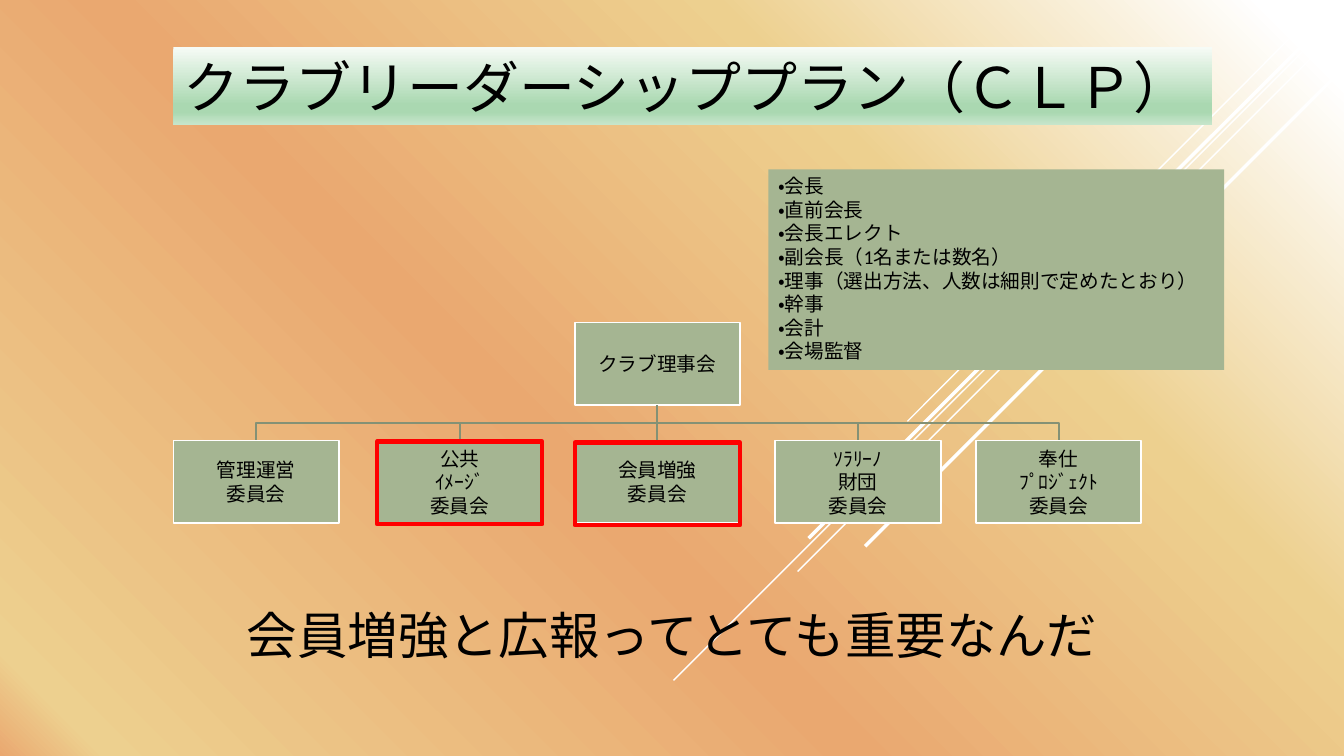
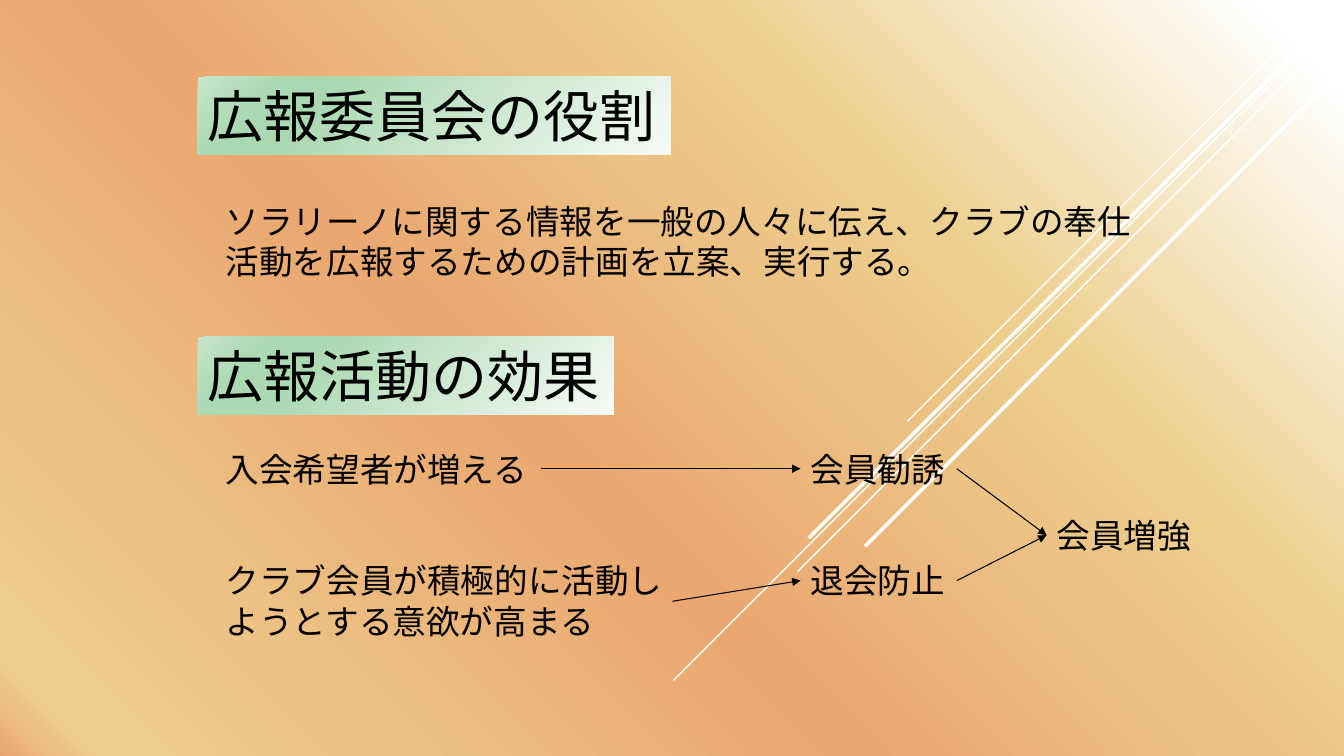
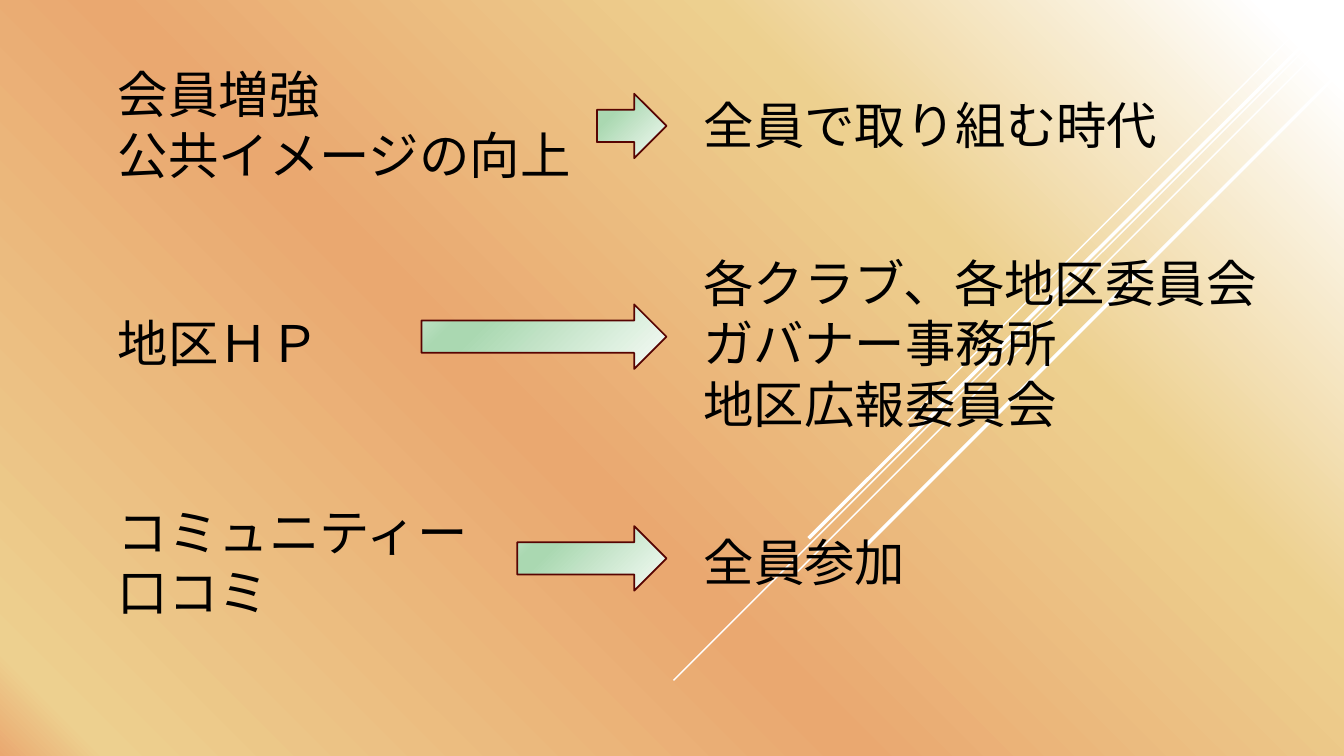
import pptx
import pptx.dml.color
import pptx.enum.lang
import pptx.enum.shapes
import pptx.enum.text
import pptx.oxml
import pptx.oxml.ns
import pptx.util

Inches = pptx.util.Inches
SHAPE = pptx.enum.shapes.MSO_SHAPE
FIT = pptx.enum.text.MSO_AUTO_SIZE.SHAPE_TO_FIT_TEXT
ALIGN = pptx.enum.text.PP_ALIGN

BLACK, WHITE, RED = "000000", "FFFFFF", "FF0000"
SAGE, BRANCH, MAROON = "A5B592", "849175", "570402"
SUNSET = [(4, "FFFFFF"), (30, "EDD08F"), (59, "EAA870"), (95, "EDD08F"), (100, "EAA870")]
MINT = [(0, "F6FBF6"), (74, "AAD8B1"), (83, "AAD8B1"), (100, "C6E5CB")]
DOWNWARD = '<a:lin ang="5400000" scaled="0"/>'
FROM_CORNER = '<a:path path="circle"><a:fillToRect {}="100000" {}="100000"/></a:path>'
FROM_TOP_RIGHT = FROM_CORNER.format("l", "b")
FROM_BOTTOM_RIGHT = FROM_CORNER.format("l", "t")
STREAKS = [
    ((13.16, 0.01), (9, 4.18), 1),
    ((13.33, 0.1), (6.68, 6.75), 1),
    ((13.33, 0.25), (7.91, 5.67), 1),
    ((13.33, 0.04), (8.02, 5.34), 2.5),
    ((13.33, 0.67), (8.58, 5.42), 2.5),
]


def rgb(value):
    return pptx.dml.color.RGBColor.from_string(value)


def drawing_xml(body):
    """Turn the text of one DrawingML element into that element."""
    return pptx.oxml.parse_xml(f"<a:root {pptx.oxml.ns.nsdecls('a')}>{body}</a:root>")[0]


def set_gradient(fill, properties, stops, direction):
    """Put a gradient in place of the fill held by the properties element."""
    fill.solid()
    solid = properties.find(pptx.oxml.ns.qn("a:solidFill"))
    marks = "".join(f'<a:gs pos="{percent * 1000}"><a:srgbClr val="{color}"/></a:gs>'
                    for percent, color in stops)
    properties.replace(solid, drawing_xml(
        f'<a:gradFill rotWithShape="1"><a:gsLst>{marks}</a:gsLst>{direction}</a:gradFill>'))


class Deck:
    def __init__(self):
        self.presentation = pptx.Presentation()
        self.presentation.slide_width = Inches(13.33)
        self.presentation.slide_height = Inches(7.5)
        self.slide = None
        master = self.presentation.slide_master
        backdrop = master.background.fill
        backdrop.solid()
        properties = master.element.find(".//" + pptx.oxml.ns.qn("p:bgPr"))
        set_gradient(backdrop, properties, SUNSET, FROM_TOP_RIGHT)

    def new_slide(self):
        self.slide = self.presentation.slides.add_slide(self.presentation.slide_layouts[6])
        for start, end, width in STREAKS:
            self.line(start, end, WHITE, width)

    def line(self, start, end, color, width):
        connector = self.slide.shapes.add_connector(
            pptx.enum.shapes.MSO_CONNECTOR.STRAIGHT, *map(Inches, start + end))
        self.outline(connector, color, width)
        connector.element.spPr.append(drawing_xml("<a:effectLst/>"))
        return connector

    def link(self, source, source_side, target, target_side, color=BLACK, width=0.75, arrow=True):
        """Join two boxes, sides counted 0 top, 1 left, 2 bottom, 3 right."""
        connector = self.line((0, 0), (0, 0), color, width)
        connector.begin_connect(source, source_side)
        connector.end_connect(target, target_side)
        if arrow:
            stroke = connector.element.spPr.find(pptx.oxml.ns.qn("a:ln"))
            stroke.append(drawing_xml('<a:tailEnd type="triangle"/>'))

    def outline(self, shape, color, width):
        shape.line.color.rgb = rgb(color)
        shape.line.width = pptx.util.Pt(width)

    def shape(self, kind, at, fill=None, line=None, width=1.25):
        shape = self.slide.shapes.add_shape(kind, *map(Inches, at))
        shape.shadow.inherit = False
        if fill:
            shape.fill.solid()
            shape.fill.fore_color.rgb = rgb(fill)
        else:
            shape.fill.background()
        self.outline(shape, line, width)
        return shape

    def branch(self, points):
        """Draw an open bent line of the organisation chart."""
        start, *rest = [tuple(map(Inches, point)) for point in points]
        builder = self.slide.shapes.build_freeform(*start)
        builder.add_line_segments(rest, close=False)
        bent_line = builder.convert_to_shape()
        bent_line.shadow.inherit = False
        bent_line.fill.background()
        self.outline(bent_line, BRANCH, 1.25)

    def put_text(self, frame, text, size, font, align=ALIGN.LEFT):
        frame.text = text
        style = {"size": pptx.util.Pt(size), "name": font,
                 "language_id": pptx.enum.lang.MSO_LANGUAGE_ID.JAPANESE}
        for paragraph in frame.paragraphs:
            paragraph.alignment = align
            for run in paragraph.runs:
                run.font.color.rgb = rgb(BLACK)
                for name, value in style.items():
                    setattr(run.font, name, value)

    def text(self, at, text, size, font="Arial", wrap=False):
        box = self.slide.shapes.add_textbox(*map(Inches, at))
        self.put_text(box.text_frame, text, size, font)
        for name, value in {"word_wrap": wrap, "auto_size": FIT}.items():
            setattr(box.text_frame, name, value)
        return box

    def heading(self, at, text, direction=FROM_BOTTOM_RIGHT):
        band = self.text(at, text, 40)
        set_gradient(band.fill, band.element.spPr, MINT, direction)

    def unit(self, left, top, text, font="Arial"):
        """Draw one box of the organisation chart."""
        box = self.shape(SHAPE.RECTANGLE, (left, top, 1.64, 0.82), SAGE, WHITE)
        self.put_text(box.text_frame, text, 14, font, ALIGN.CENTER)
        margins = dict.fromkeys(
            ("margin_left", "margin_top", "margin_right", "margin_bottom"), Inches(0.01))
        middle = pptx.enum.text.MSO_ANCHOR.MIDDLE
        for name, value in {**margins, "vertical_anchor": middle, "word_wrap": True}.items():
            setattr(box.text_frame, name, value)
        return box

    def block_arrow(self, left, top):
        right = 6.61
        arrow = self.shape(SHAPE.RIGHT_ARROW, (left, top, right - left, 0.64), line=MAROON)
        set_gradient(arrow.fill, arrow.element.spPr, MINT, FROM_BOTTOM_RIGHT)


def leadership_plan(deck):
    deck.new_slide()
    trunk, committee_top = 6.52, 4.37
    committees = [
        (1.72, "管理運営\n委員会", "Arial"),
        (3.74, "公共\nｲﾒｰｼﾞ\n委員会", "Arial"),
        (5.7, "会員増強\n委員会", "Arial"),
        (7.69, "ｿﾗﾘｰﾉ\n財団\n委員会", "Lato"),
        (9.68, "奉仕\nﾌﾟﾛｼﾞｪｸﾄ\n委員会", "Lato"),
    ]
    board_left = 5.7
    board = deck.unit(board_left, 3.2, "クラブ理事会")
    for left, name, font in committees:
        center = left + 0.82
        if left != board_left:
            deck.branch([(trunk, 4.03), (trunk, 4.2), (center, 4.2), (center, committee_top)])
        committee = deck.unit(left, committee_top, name, font)
        if left == board_left:
            deck.link(board, 2, committee, 0, BRANCH, 1.25, arrow=False)

    deck.heading((1.72, 0.47, 10.3, 0.77), "クラブリーダーシッププラン（ＣＬＰ）", DOWNWARD)
    officers = deck.text(
        (7.62, 1.68, 4.52, 1.99),
        "・会長\n・直前会長\n・会長エレクト\n・副会長（1名または数名）\n"
        "・理事（選出方法、人数は細則で定めたとおり）\n・幹事\n・会計\n・会場監督",
        14, "Calibri")
    officers.fill.solid()
    officers.fill.fore_color.rgb = rgb(SAGE)
    deck.text((2.35, 5.94, 8.78, 0.71), "会員増強と広報ってとても重要なんだ", 36)
    for left, top in [(3.74, 4.38), (5.7, 4.39)]:
        deck.shape(SHAPE.RECTANGLE, (left, top, 1.64, 0.82), line=RED, width=3)


def publicity_role(deck):
    deck.new_slide()
    deck.heading((1.96, 0.76, 4.69, 0.77), "広報委員会の役割")
    deck.text((2.14, 1.94, 9.32, 0.91),
              "ソラリーノに関する情報を一般の人々に伝え、クラブの奉仕"
              "活動を広報するための計画を立案、実行する。", 24, wrap=True)
    deck.heading((1.96, 3.34, 4.13, 0.77), "広報活動の効果")
    motivation = deck.text((2.14, 5.51, 4.53, 0.91),
                           "クラブ会員が積極的に活動しようとする意欲が高まる", 24, wrap=True)
    applicants = deck.text((2.14, 4.4, 3.23, 0.5), "入会希望者が増える", 24)
    recruiting = deck.text((7.94, 4.4, 1.55, 0.5), "会員勧誘", 24)
    retention = deck.text((7.94, 5.51, 1.55, 0.5), "退会防止", 24)
    growth = deck.text((10.38, 5.06, 1.55, 0.5), "会員増強", 24)
    for cause, effect in [(applicants, recruiting), (motivation, retention),
                          (recruiting, growth), (retention, growth)]:
        deck.link(cause, 3, effect, 1)


def who_takes_part(deck):
    deck.new_slide()
    topic_left, people_left = 1.07, 6.88
    for left, top, width, height, text in [
        (topic_left, 0.58, 4.75, 1.31, "会員増強\n公共イメージの向上"),
        (people_left, 0.88, 4.75, 0.71, "全員で取り組む時代"),
        (topic_left, 3.05, 2.22, 0.71, "地区ＨＰ"),
        (people_left, 2.45, 5.76, 1.92, "各クラブ、各地区委員会\nガバナー事務所\n地区広報委員会"),
        (topic_left, 4.92, 3.74, 1.31, "コミュニティー\n口コミ"),
        (people_left, 5.22, 2.22, 0.71, "全員参加"),
    ]:
        deck.text((left, top, width, height), text, 36)
    for left, top in [(5.92, 0.93), (4.18, 3.02), (5.13, 5.22)]:
        deck.block_arrow(left, top)


def main():
    deck = Deck()
    leadership_plan(deck)
    publicity_role(deck)
    who_takes_part(deck)
    deck.presentation.save("out.pptx")


if __name__ == "__main__":
    main()
